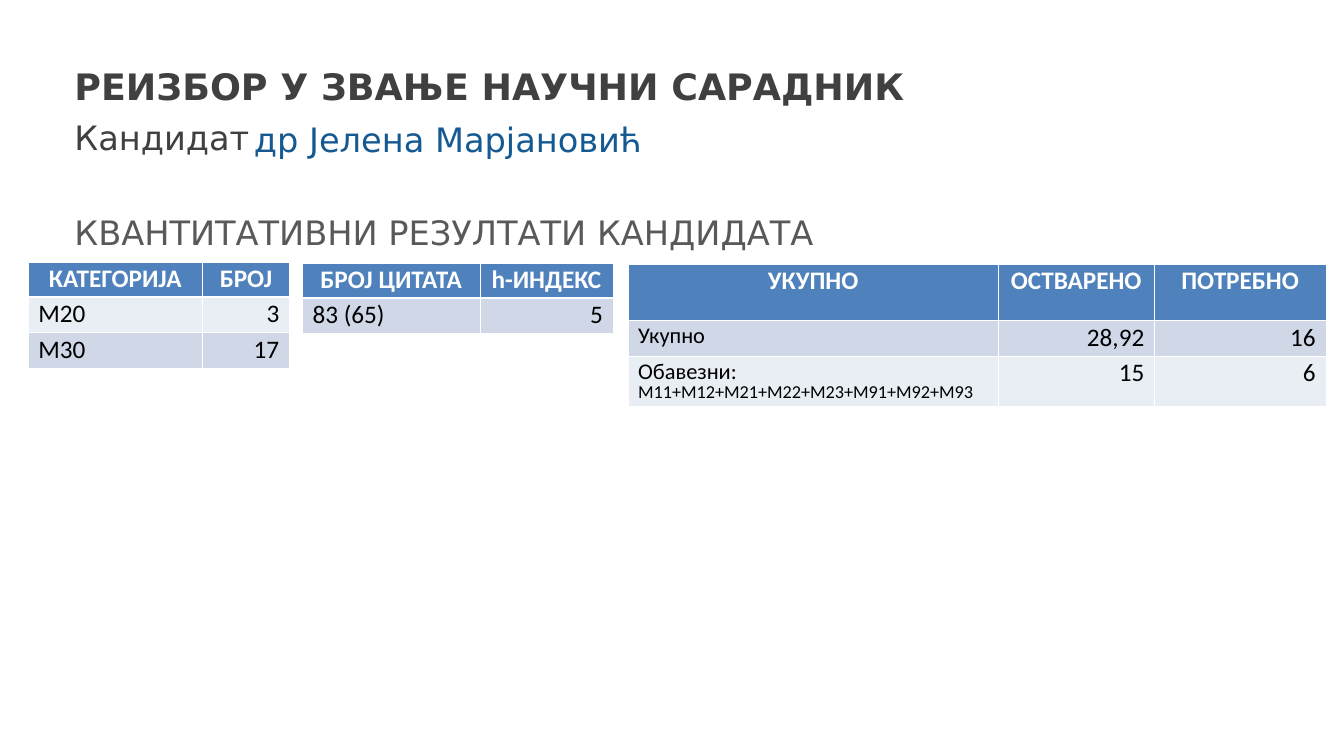
from lxml.etree import SubElement
from pptx import Presentation
from pptx.dml.color import RGBColor
from pptx.enum.text import MSO_ANCHOR, PP_ALIGN
from pptx.oxml.ns import qn
from pptx.util import Inches, Pt

COLORS = {"title": "404040", "section": "595959", "name": "145991", "header": "4F81BD",
          "dark": "D0D8E8", "light": "E9EDF4", "white": "FFFFFF", "black": "000000"}


class SlideBuilder:
    """Holds the slide and its style and adds text boxes and tables."""

    def __init__(self, slide):
        self.s = slide
        self.heading_font = "DejaVu Sans"
        self.table_font = "Calibri"

    def styled_text(self, p, text, color, **formats):
        r = p.add_run()
        r.text = text
        for key, value in formats.items():
            setattr(r.font, key, value)
        r.font.color.rgb = RGBColor.from_string(COLORS[color])

    def text(self, box, text, size, color, anchor, bold=False, spacing=1.0):
        tf = self.s.shapes.add_textbox(*map(Inches, box)).text_frame
        tf.word_wrap = True
        tf.vertical_anchor = anchor
        p = tf.paragraphs[0]
        p.line_spacing = spacing
        self.styled_text(p, text, color, size=Pt(size), name=self.heading_font, bold=bold)

    def borders(self, cell, row):
        tcPr = cell._tc.get_or_add_tcPr()
        thick = {0: "lnB", 1: "lnT"}.get(row)
        for side in ("lnL", "lnR", "lnT", "lnB"):
            width = Pt(1.47 if side == thick else 0.45)
            ln = SubElement(tcPr, qn(f"a:{side}"), w=str(width))
            fill = SubElement(ln, qn("a:solidFill"))
            SubElement(fill, qn("a:srgbClr"), val=COLORS["white"])

    def cell(self, cell, row, col, lines, fill, anchor):
        self.borders(cell, row)
        cell.fill.solid()
        cell.fill.fore_color.rgb = RGBColor.from_string(COLORS[fill])
        cell.vertical_anchor = anchor
        tf = cell.text_frame
        header = row == 0
        for i, (text, size) in enumerate(lines):
            p = tf.add_paragraph() if i else tf.paragraphs[0]
            p.line_spacing = 0.83
            p.alignment = (PP_ALIGN.CENTER if header
                           else PP_ALIGN.RIGHT if col else PP_ALIGN.LEFT)
            self.styled_text(p, text, "white" if header else "black", size=Pt(size),
                             name=self.table_font, bold=header)

    def table(self, left, top, widths, heights, rows, fills, anchor):
        box = (left, top, sum(widths), sum(heights))
        table = self.s.shapes.add_table(len(rows), len(widths), *map(Inches, box)).table
        for col, width in zip(table.columns, widths):
            col.width = Inches(width)
        for i, (values, height, fill) in enumerate(zip(rows, heights, fills)):
            table.rows[i].height = Inches(height)
            for j, value in enumerate(values):
                lines = [(value, 18)] if isinstance(value, str) else value
                self.cell(table.cell(i, j), i, j, lines, fill, anchor)


def main():
    prs = Presentation()
    prs.slide_width, prs.slide_height = Inches(13.33), Inches(7.5)
    b = SlideBuilder(prs.slides.add_slide(prs.slide_layouts[6]))
    top, middle, bottom = MSO_ANCHOR.TOP, MSO_ANCHOR.MIDDLE, MSO_ANCHOR.BOTTOM

    b.text((0.64, 0.54, 12.06, 0.58), "РЕИЗБОР У ЗВАЊЕ НАУЧНИ САРАДНИК", 26, "title",
           bottom, bold=True)
    b.text((0.64, 1.11, 12.06, 0.5), "Кандидат", 24, "title", top)
    b.text((2.42, 1.12, 6.75, 0.48), "др Јелена Марјановић", 24, "name", middle, spacing=1.1)
    b.text((0.64, 1.97, 12.06, 0.58), "КВАНТИТАТИВНИ РЕЗУЛТАТИ КАНДИДАТА", 24, "section",
           bottom)

    b.table(6.23, 2.62, (3.67, 1.55, 1.7), (0.56, 0.35, 0.5), [
        ("УКУПНО", "ОСТВАРЕНО", "ПОТРЕБНО"),
        ([("Укупно", 16)], "28,92", "16"),
        ([("Обавезни:", 16), ("M11+M12+M21+M22+M23+М91+М92+М93", 13)], "15", "6"),
    ], ("header", "dark", "light"), top)
    b.table(0.28, 2.6, (1.73, 0.86), (0.35,) * 3,
            [("КАТЕГОРИЈА", "БРОЈ"), ("М20", "3"), ("М30", "17")],
            ("header", "light", "dark"), middle)
    b.table(3, 2.61, (1.76, 1.32), (0.35,) * 2,
            [("БРОЈ ЦИТАТА", "h-ИНДЕКС"), ("83 (65)", "5")],
            ("header", "dark"), middle)
    prs.save("out.pptx")


if __name__ == "__main__":
    main()
